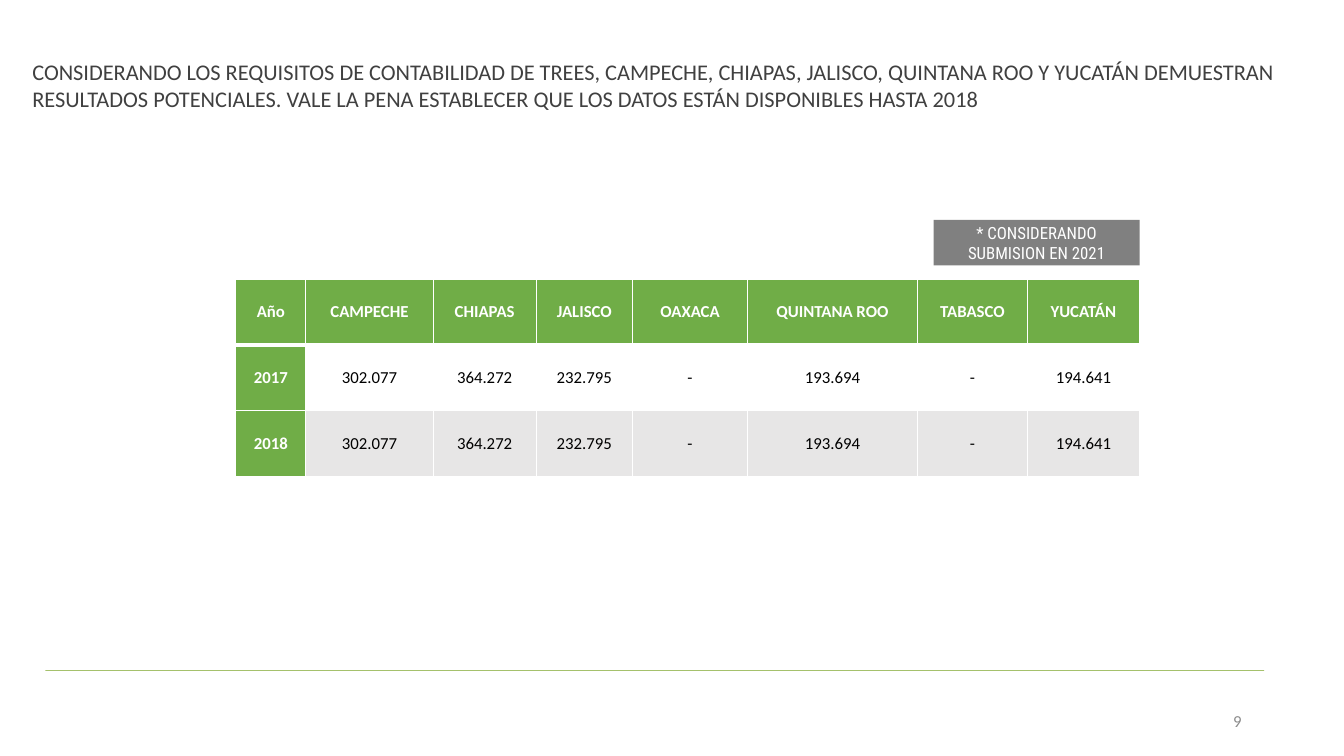
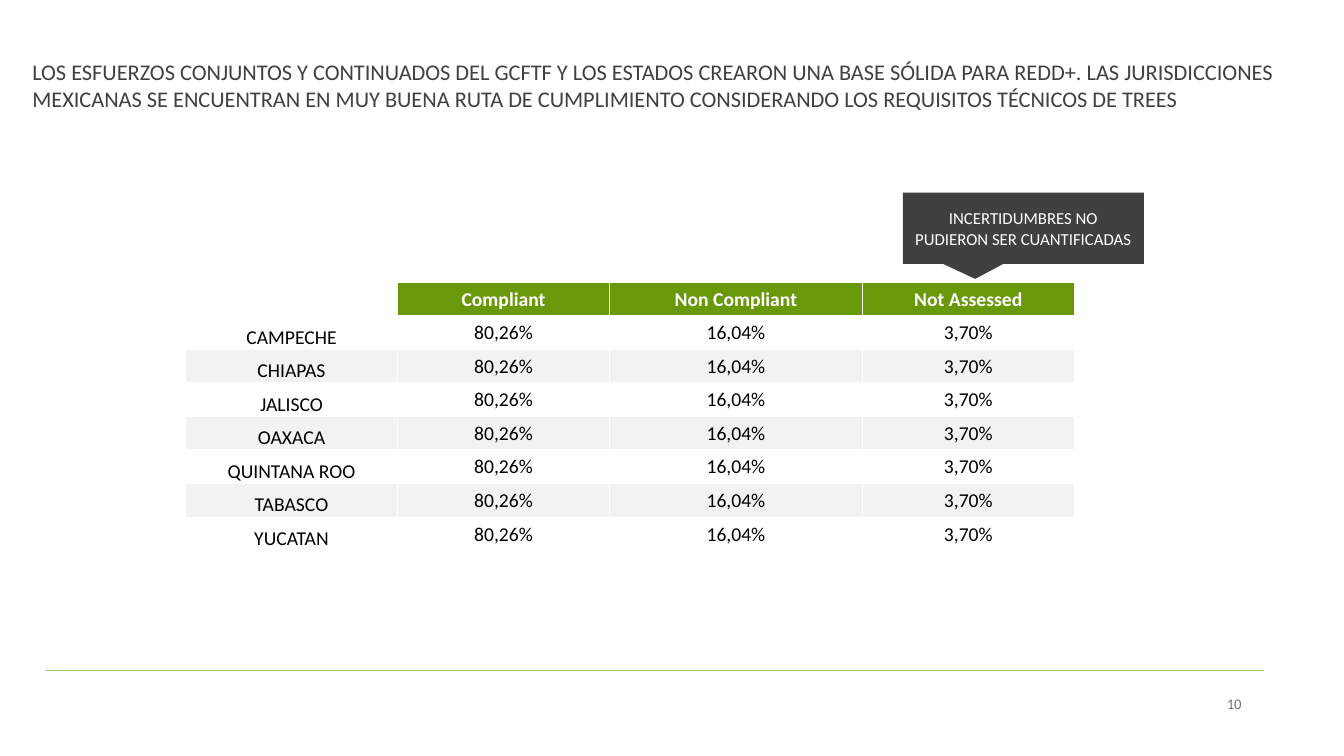
from collections import namedtuple
from dataclasses import dataclass

from lxml.etree import SubElement
from pptx import Presentation
from pptx.dml.color import RGBColor
from pptx.enum.shapes import MSO_CONNECTOR as Connector, MSO_SHAPE as Shape
from pptx.enum.text import MSO_ANCHOR as Anchor, PP_ALIGN as Align
from pptx.oxml.ns import qn
from pptx.util import Pt

Box = namedtuple("Box", "left top width height")
Style = namedtuple("Style", "size color bold font", defaults=(False, "Calibri"))


@dataclass(frozen=True)
class Theme:
    white: str = "FFFFFF"
    leaf: str = "70AD47"
    olive: str = "69990A"
    band_gray: str = "E7E6E6"
    band_light: str = "F2F2F2"
    badge_gray: str = "808080"
    charcoal: str = "404040"
    title: Style = Style(16, "404040")
    badge: Style = Style(12, "FFFFFF", font="Roboto Condensed")
    callout: Style = Style(12, "FFFFFF")
    result_head: Style = Style(12, "FFFFFF", True)
    result_value: Style = Style(12, "000000")
    score_head: Style = Style(14, "FFFFFF", True)
    score_value: Style = Style(14, "000000")
    page_middle: Style = Style(12, "8C8C8C")
    page_small: Style = Style(10.5, "767171")


THEME = Theme()
SLIDE = Box(0, 0, 960, 540)
TITLE = Box(16, 38, 926, 46)

RESULT_COLUMNS = [50, 91, 73.5, 69, 82, 121.5, 78.5, 80]
RESULT_VALUES = ["302.077", "364.272", "232.795", "-", "193.694", "-", "194.641"]
RESULTS = [
    ["Año", "CAMPECHE", "CHIAPAS", "JALISCO", "OAXACA", "QUINTANA ROO", "TABASCO", "YUCATÁN"],
    *([year, *RESULT_VALUES] for year in ("2017", "2018")),
]

SCORE_COLUMNS = [151.5, 151.5, 180.5, 151.5]
STATES = ["CAMPECHE", "CHIAPAS", "JALISCO", "OAXACA", "QUINTANA ROO", "TABASCO", "YUCATAN"]
SCORES = [
    ["", "Compliant", "Non Compliant", "Not Assessed"],
    *([state, "80,26%", "16,04%", "3,70%"] for state in STATES),
]


def rgb(color):
    return RGBColor.from_string(color)


def write(frame, text, style, align=Align.LEFT):
    paragraph = frame.paragraphs[0]
    paragraph.alignment = align
    run = paragraph.add_run()
    run.text = text
    run.font.size = Pt(style.size)
    run.font.name = style.font
    run.font.bold = style.bold
    run.font.color.rgb = rgb(style.color)


def add_text(slide, box, text, style, align=Align.LEFT, anchor=Anchor.TOP):
    frame = slide.shapes.add_textbox(*map(Pt, box)).text_frame
    frame.word_wrap = True
    frame.vertical_anchor = anchor
    write(frame, text, style, align)


def add_note(slide, box, preset, fill, text, style):
    note = slide.shapes.add_shape(preset, *map(Pt, box))
    note.shadow.inherit = False
    note.fill.solid()
    note.fill.fore_color.rgb = rgb(fill)
    note.line.fill.background()
    frame = note.text_frame
    frame.word_wrap = True
    frame.vertical_anchor = Anchor.MIDDLE
    write(frame, text, style, Align.CENTER)
    return note


def add_footer_rule(slide):
    y = 479
    rule = slide.shapes.add_connector(Connector.STRAIGHT, Pt(32.5), Pt(y), Pt(903), Pt(y))
    rule.line.width = Pt(0.5)
    rule.line.color.rgb = rgb(THEME.olive)
    properties = rule.line._get_or_add_ln().getparent()
    SubElement(properties.find(".//" + qn("a:srgbClr")), qn("a:alpha"), val="60000")
    SubElement(properties, qn("a:effectLst"))


def add_frame(deck, title, number, number_top, number_style):
    slide = deck.slides.add_slide(deck.slide_layouts[6])
    add_text(slide, TITLE, title, THEME.title)
    add_footer_rule(slide)
    number_box = Box(678, number_top, 216, 29)
    add_text(slide, number_box, number, number_style, Align.RIGHT, Anchor.MIDDLE)
    return slide


def set_borders(cell, top=1, bottom=1):
    properties = cell._tc.get_or_add_tcPr()
    for side, width in (("L", 1), ("R", 1), ("T", top), ("B", bottom)):
        line = SubElement(properties, qn(f"a:ln{side}"), w=str(Pt(width)))
        fill = SubElement(line, qn("a:solidFill"))
        SubElement(fill, qn("a:srgbClr"), val=THEME.white)


def add_grid(slide, left, top, columns, row_height, rows, margins, look, head_rule=1):
    size = Box(left, top, sum(columns), row_height * len(rows))
    table = slide.shapes.add_table(len(rows), len(columns), *map(Pt, size)).table
    table.first_row = table.horz_banding = False
    for column, width in zip(table.columns, columns):
        column.width = Pt(width)
    for r, texts in enumerate(rows):
        table.rows[r].height = Pt(row_height)
        for c, text in enumerate(texts):
            cell = table.cell(r, c)
            fill, style, anchor = look(r, c)
            cell.margin_left, cell.margin_top, cell.margin_right, cell.margin_bottom = map(Pt, margins)
            cell.vertical_anchor = anchor
            set_borders(cell, head_rule if r == 1 else 1, head_rule if r == 0 else 1)
            cell.fill.solid()
            cell.fill.fore_color.rgb = rgb(fill)
            if text:
                write(cell.text_frame, text, style, Align.CENTER)


def result_look(row, column):
    if row == 0 or column == 0:
        return THEME.leaf, THEME.result_head, Anchor.MIDDLE
    band = THEME.white if row % 2 else THEME.band_gray
    return band, THEME.result_value, Anchor.MIDDLE


def score_look(row, column):
    if row == 0:
        return (THEME.olive if column else THEME.white), THEME.score_head, Anchor.MIDDLE
    band = THEME.white if row % 2 else THEME.band_light
    return band, THEME.score_value, Anchor.MIDDLE if column else Anchor.BOTTOM


def add_results(slide, left, top):
    add_grid(slide, left, top, RESULT_COLUMNS, 47, RESULTS, (5, 0, 5, 0), result_look, head_rule=3)
    badge_width = 147
    badge = Box(left + sum(RESULT_COLUMNS) - badge_width, top - 42.5, badge_width, 32.5)
    add_note(slide, badge, Shape.RECTANGLE, THEME.badge_gray,
             "* CONSIDERANDO SUBMISION EN 2021", THEME.badge)


def add_scores(slide, left, top):
    add_grid(slide, left, top, SCORE_COLUMNS, 24, SCORES, (0.7, 0.7, 0.7, 0), score_look)
    callout = Box(left + 512.5, top - 64, 172, 51)
    note = add_note(slide, callout, Shape.RECTANGULAR_CALLOUT, THEME.charcoal,
                    "INCERTIDUMBRES NO PUDIERON SER CUANTIFICADAS", THEME.callout)
    note.adjustments[0] = -0.2
    note.adjustments[1] = 0.71


def main():
    deck = Presentation()
    deck.slide_width, deck.slide_height = Pt(SLIDE.width), Pt(SLIDE.height)
    results = add_frame(
        deck,
        "CONSIDERANDO LOS REQUISITOS DE CONTABILIDAD DE TREES, CAMPECHE, CHIAPAS, JALISCO, "
        "QUINTANA ROO Y YUCATÁN DEMUESTRAN RESULTADOS POTENCIALES. VALE LA PENA ESTABLECER "
        "QUE LOS DATOS ESTÁN DISPONIBLES HASTA 2018",
        "9", 500.5, THEME.page_middle)
    add_results(results, 168.5, 199.5)
    scores = add_frame(
        deck,
        "LOS ESFUERZOS CONJUNTOS Y CONTINUADOS DEL GCFTF Y LOS ESTADOS CREARON UNA BASE SÓLIDA "
        "PARA REDD+. LAS JURISDICCIONES MEXICANAS SE ENCUENTRAN EN MUY BUENA RUTA DE "
        "CUMPLIMIENTO CONSIDERANDO LOS REQUISITOS TÉCNICOS DE TREES",
        "10", 488, THEME.page_small)
    add_scores(scores, 132.5, 201.5)
    deck.save("out.pptx")


if __name__ == "__main__":
    main()
